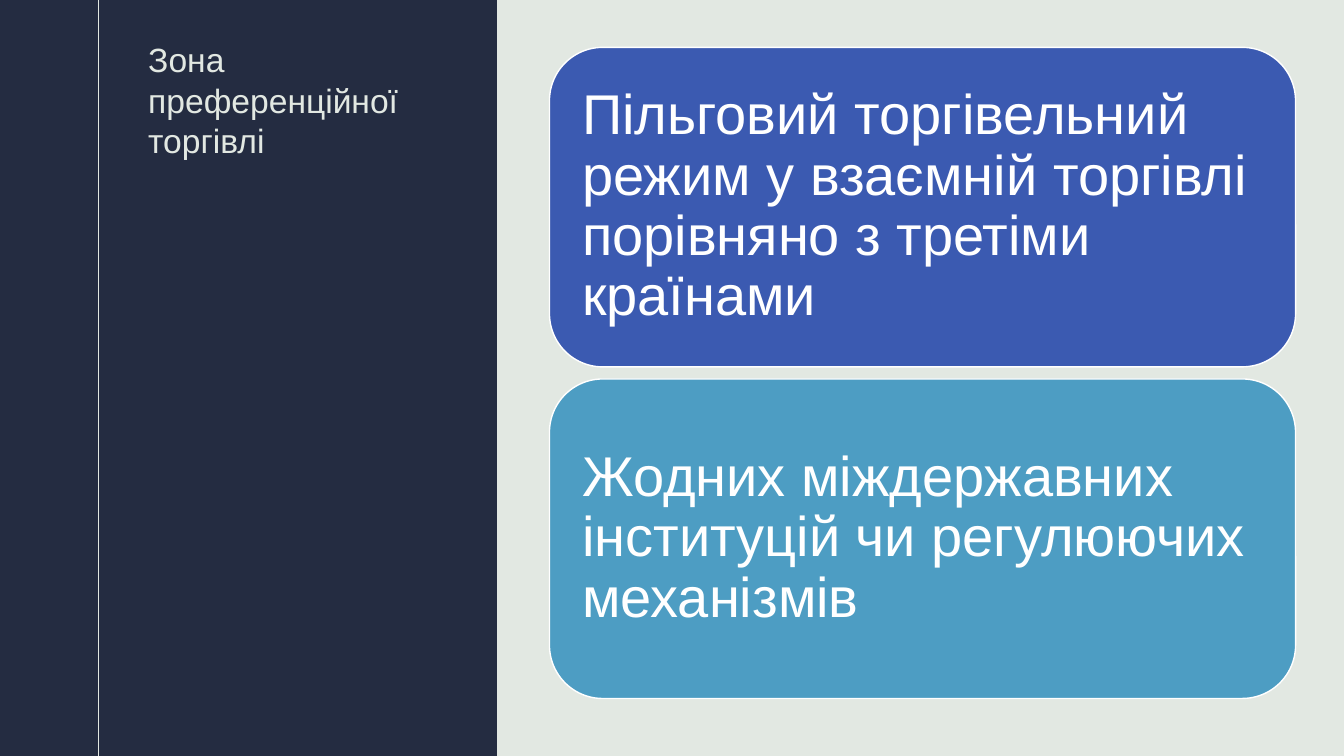
from pptx import Presentation
from pptx.dml.color import RGBColor
from pptx.enum.shapes import MSO_CONNECTOR, MSO_SHAPE
from pptx.enum.text import MSO_ANCHOR, PP_ALIGN
from pptx.util import Inches, Pt
from lxml.etree import SubElement
from pptx.oxml.ns import qn

NAVY = RGBColor(0x24, 0x2C, 0x41)
PALE = RGBColor(0xE2, 0xE8, 0xE2)
BLUE = RGBColor(0x3B, 0x5A, 0xB1)
TEAL = RGBColor(0x4D, 0x9D, 0xC3)
WHITE = RGBColor(0xFF, 0xFF, 0xFF)

WIDTH, HEIGHT = 13.33, 7.5


class SlideBuilder:
    font = "Arial"

    def __init__(self, slide, background):
        self.slide = slide
        slide.background.fill.solid()
        slide.background.fill.fore_color.rgb = background

    def block(self, kind, left, top, width, height, fill):
        block = self.slide.shapes.add_shape(
            kind, Inches(left), Inches(top), Inches(width), Inches(height))
        block.shadow.inherit = False
        block.fill.solid()
        block.fill.fore_color.rgb = fill
        block.line.fill.background()
        return block

    def rule(self, x, color):
        rule = self.slide.shapes.add_connector(
            MSO_CONNECTOR.STRAIGHT, Inches(x), 0, Inches(x), Inches(HEIGHT))
        rule.line.color.rgb = color
        rule.line.width = Pt(0.75)
        SubElement(rule._element.spPr, qn("a:effectLst"))

    def set_text(self, frame, text, size, color, inset, anchor, spacing):
        frame.word_wrap = True
        frame.vertical_anchor = anchor
        frame.margin_left = frame.margin_right = Inches(inset)
        frame.margin_top = frame.margin_bottom = Inches(inset)
        frame.text = text
        paragraph = frame.paragraphs[0]
        paragraph.alignment = PP_ALIGN.LEFT
        paragraph.line_spacing = spacing
        font = paragraph.runs[0].font
        font.name, font.size, font.color.rgb = self.font, Pt(size), color

    def title(self, text, left, top, width, height):
        title = self.slide.shapes.add_textbox(
            Inches(left), Inches(top), Inches(width), Inches(height))
        self.set_text(title.text_frame, text, 24, PALE, 0, MSO_ANCHOR.TOP, 1.0)

    def card(self, text, left, top, width, height, fill):
        card = self.block(MSO_SHAPE.ROUNDED_RECTANGLE, left, top, width, height, fill)
        card.line.color.rgb = WHITE
        card.line.width = Pt(1)
        self.set_text(card.text_frame, text, 40, WHITE, 0.17, MSO_ANCHOR.MIDDLE, 0.9)


def main():
    presentation = Presentation()
    presentation.slide_width = Inches(WIDTH)
    presentation.slide_height = Inches(HEIGHT)
    builder = SlideBuilder(
        presentation.slides.add_slide(presentation.slide_layouts[6]), PALE)

    # Side panel with the title
    builder.block(MSO_SHAPE.RECTANGLE, 0, 0, 4.93, HEIGHT, NAVY)
    builder.title("Зона преференційної торгівлі", 1.47, 0.39, 2.98, 6.66)
    builder.rule(0.98, PALE)

    # Cards with the features of the zone
    features = [
        ("Пільговий торгівельний режим у взаємній торгівлі "
         "порівняно з третіми країнами", BLUE),
        ("Жодних міждержавних інституцій чи регулюючих механізмів", TEAL),
    ]
    card_height, gap = 3.17, 0.12
    for row, (feature, fill) in enumerate(features):
        top = 0.47 + row * (card_height + gap)
        builder.card(feature, 5.45, top, 7.4, card_height, fill)

    presentation.save("out.pptx")


if __name__ == "__main__":
    main()
